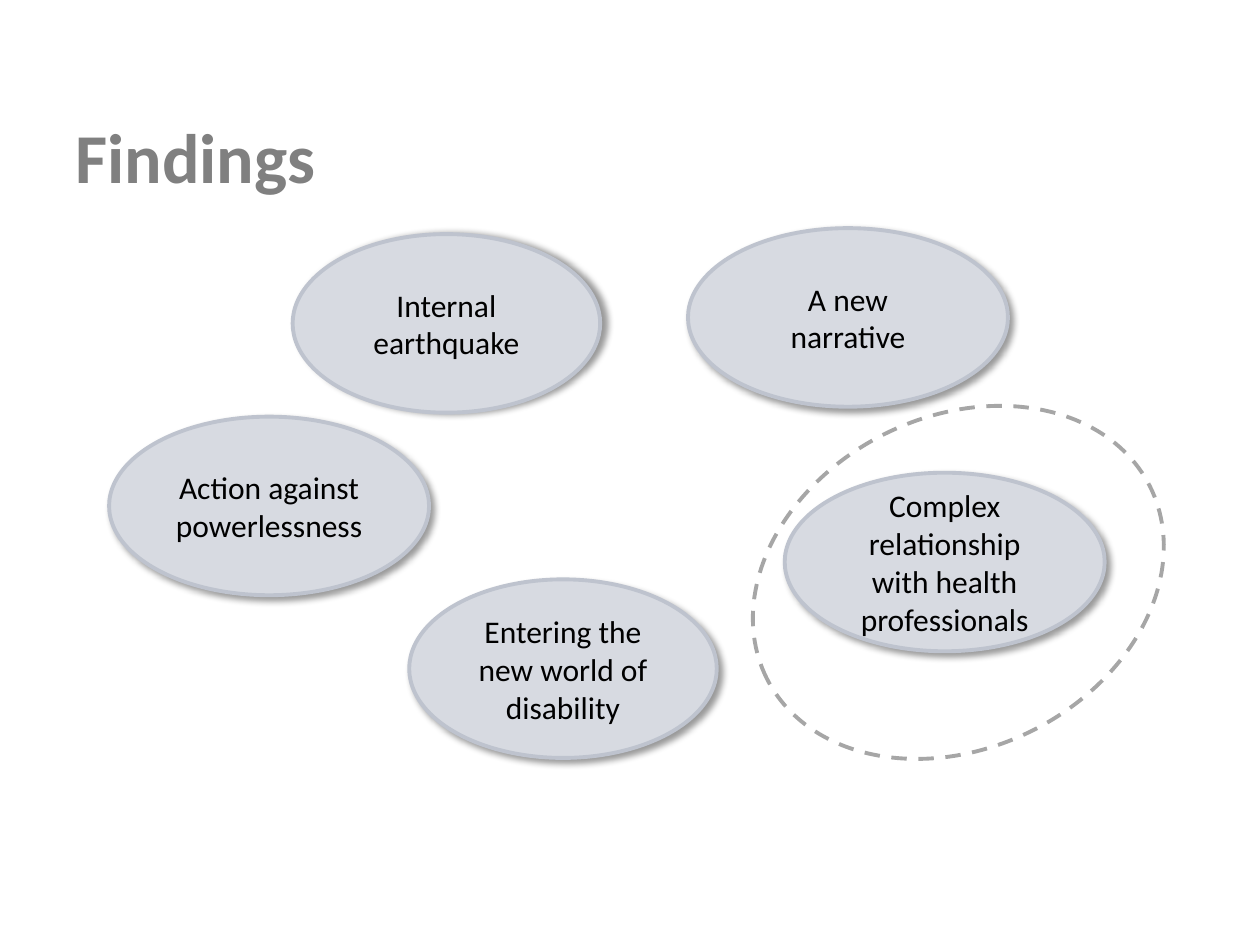
"""Build the findings slide: five themes and a dashed ring."""
from dataclasses import dataclass

from lxml import etree
from pptx import Presentation
from pptx.dml.color import RGBColor
from pptx.enum.dml import MSO_LINE
from pptx.enum.shapes import MSO_SHAPE
from pptx.enum.text import MSO_ANCHOR, PP_ALIGN
from pptx.oxml import parse_xml
from pptx.oxml.ns import qn
from pptx.util import Cm, Pt

OVAL = MSO_SHAPE.OVAL
DASH = MSO_LINE.DASH
TOP, MIDDLE = MSO_ANCHOR.TOP, MSO_ANCHOR.MIDDLE
LEFT, CENTER = PP_ALIGN.LEFT, PP_ALIGN.CENTER
NS = "http://schemas.openxmlformats.org/drawingml/2006/main"


@dataclass(frozen=True)
class Theme:
    font: str = "Calibri"
    fill: str = "D7DAE1"
    edge: str = "BEC3CE"
    ring: str = "A6A6A6"
    head: str = "808080"
    ink: str = "000000"
    halo: str = "FFFFFF"
    title: float = 40
    body: float = 18
    line: float = 2.22


class Deck:
    def __init__(self, theme):
        self.theme = theme
        self.prs = Presentation()
        self.prs.slide_width, self.prs.slide_height = Cm(25.4), Cm(19.05)
        self.slide = self.prs.slides.add_slide(self.prs.slide_layouts[6])

    def label(self, frame, text, size, color, align, anchor):
        frame.word_wrap = True
        frame.vertical_anchor = anchor
        para = frame.paragraphs[0]
        para.alignment = align
        run = para.add_run()
        run.text = text
        run.font.name = self.theme.font
        run.font.size = Pt(size)
        run.font.color.rgb = RGBColor.from_string(color)
        return run

    def title(self, text, *box):
        look = self.theme
        frame = self.slide.shapes.add_textbox(*map(Cm, box)).text_frame
        run = self.label(frame, text, look.title, look.head, LEFT, TOP)
        run.font.bold = True
        halo = parse_xml(
            f'<a:ln xmlns:a="{NS}" w="{Pt(1.1)}"><a:solidFill>'
            f'<a:srgbClr val="{look.halo}"/></a:solidFill></a:ln>')
        run.font._element.insert(0, halo)

    def oval(self, box, edge):
        shape = self.slide.shapes.add_shape(OVAL, *map(Cm, box))
        shape.shadow.inherit = False
        shape.line.color.rgb = RGBColor.from_string(edge)
        shape.line.width = Pt(self.theme.line)
        return shape

    def shade(self, shape, angle):
        effects = shape._element.spPr.find(qn("a:effectLst"))
        outer = etree.SubElement(
            effects, qn("a:outerShdw"), blurRad=str(Pt(4)), dist=str(Pt(3)),
            dir=str(angle * 60000), algn="ctr", rotWithShape="0")
        color = etree.SubElement(outer, qn("a:srgbClr"), val=self.theme.ink)
        etree.SubElement(color, qn("a:alpha"), val="40000")

    def bubble(self, text, left, top, width, angle=45):
        look = self.theme
        shape = self.oval((left, top, width, 3.6), look.edge)
        shape.fill.solid()
        shape.fill.fore_color.rgb = RGBColor.from_string(look.fill)
        self.shade(shape, angle)
        self.label(shape.text_frame, text, look.body, look.ink, CENTER, MIDDLE)

    def ring(self, turn, *box):
        shape = self.oval(box, self.theme.ring)
        shape.fill.background()
        shape.line.dash_style = DASH
        shape.rotation = turn


def main():
    deck = Deck(Theme())
    slim, wide = 6.2, 6.45
    deck.bubble("Entering the new world of disability", 8.25, 11.68, slim)
    deck.bubble("Internal earthquake", 5.9, 4.72, slim, angle=0)
    deck.bubble("Complex relationship with health professionals",
                15.82, 9.53, wide)
    deck.bubble("Action against powerlessness", 2.2, 8.4, wide)
    deck.bubble("A new narrative", 13.87, 4.6, wide)
    deck.title("Findings", 1.27, 2.16, 22.86, 3.18)
    deck.ring(333.4, 15, 8.4, 8.64, 6.68)
    deck.prs.save("out.pptx")


if __name__ == "__main__":
    main()
